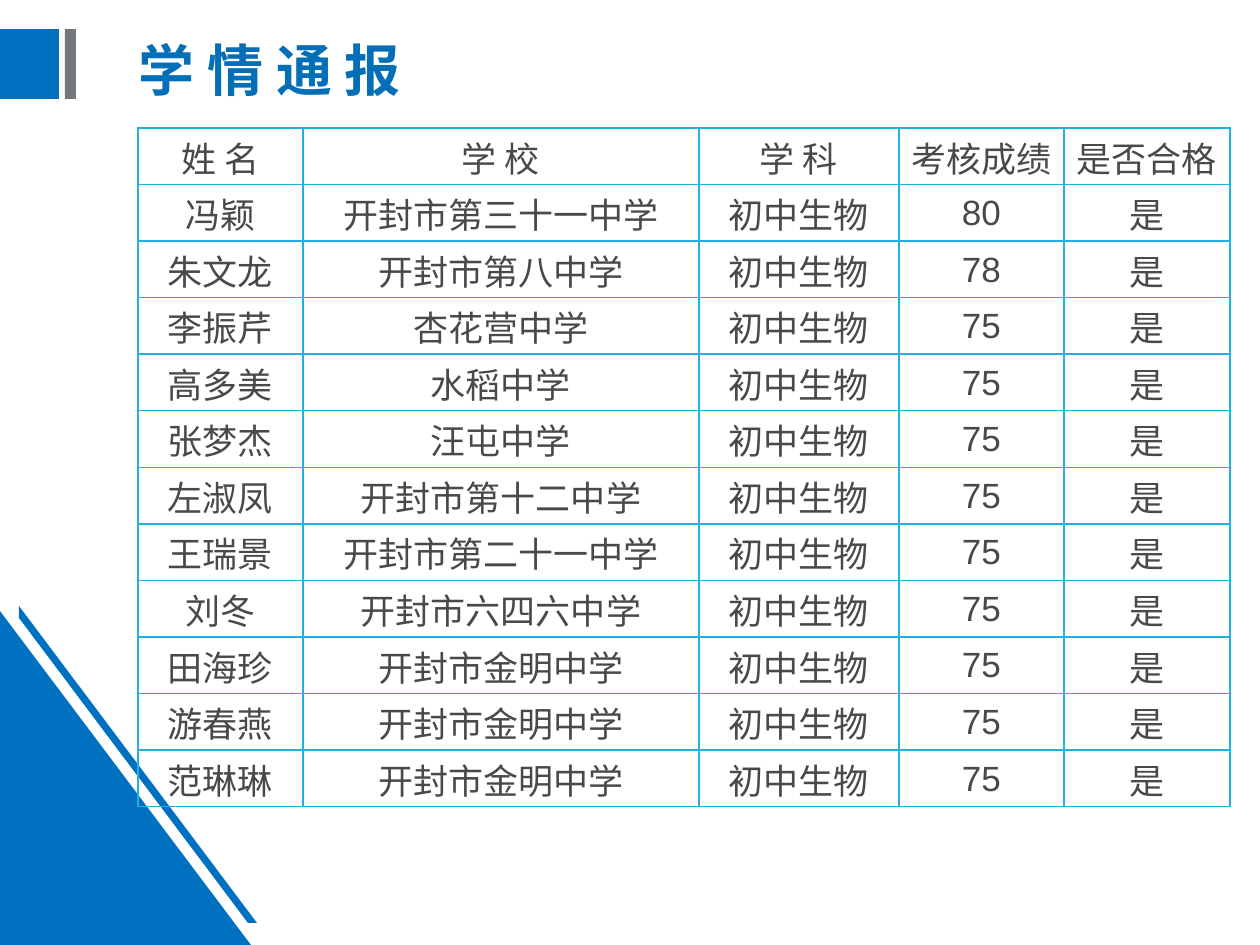
from lxml.etree import SubElement
from pptx import Presentation
from pptx.dml.color import RGBColor
from pptx.enum.shapes import MSO_SHAPE as SHAPE
from pptx.enum.text import MSO_ANCHOR as ANCHOR, PP_ALIGN as ALIGN
from pptx.oxml.ns import qn
from pptx.util import Inches, Pt

PX = Inches(1) / 126
BLUE = RGBColor(0x00, 0x70, 0xC0)
GRAY = RGBColor(0x73, 0x76, 0x7A)
TITLE_BLUE = RGBColor(0x04, 0x6F, 0xB6)
TEXT = RGBColor(0x47, 0x49, 0x4B)
BORDER = RGBColor(0x22, 0xB1, 0xDE)
TITLE_FONT = "Noto Sans CJK SC"

HEADER = ["姓 名", "学 校", "学 科", "考核成绩", "是否合格"]
SUBJECT, PASSED = "初中生物", "是"
RESULTS = [
    ("冯颖", "开封市第三十一中学", 80),
    ("朱文龙", "开封市第八中学", 78),
    ("李振芹", "杏花营中学", 75),
    ("高多美", "水稻中学", 75),
    ("张梦杰", "汪屯中学", 75),
    ("左淑凤", "开封市第十二中学", 75),
    ("王瑞景", "开封市第二十一中学", 75),
    ("刘冬", "开封市六四六中学", 75),
    ("田海珍", "开封市金明中学", 75),
    ("游春燕", "开封市金明中学", 75),
    ("范琳琳", "开封市金明中学", 75),
]
COL_WIDTHS = [165, 396, 200, 165, 166]


def px(n):
    return round(n * PX)


def paint(sp, color):
    sp.shadow.inherit = False
    sp.fill.solid()
    sp.fill.fore_color.rgb = color
    sp.line.fill.background()


def add_block(s, kind, x, y, w, h, color):
    paint(s.shapes.add_shape(kind, px(x), px(y), px(w), px(h)), color)


def add_title_marker(s, x, y, h):
    add_block(s, SHAPE.RECTANGLE, x, y, 59, h, BLUE)
    add_block(s, SHAPE.RECTANGLE, x + 65, y, 11, h, GRAY)


def add_corner(s, x, y, w, h):
    add_block(s, SHAPE.RIGHT_TRIANGLE, x, y + 5, w - 6, h - 5, BLUE)
    fb = s.shapes.build_freeform(x + 19, y, scale=PX)
    fb.add_line_segments([(x + w, y + 317), (x + w - 9, y + 317), (x + 19, y + 12)])
    paint(fb.convert_to_shape(), BLUE)


def set_title(s, text, x, y, w, h):
    sp = s.shapes.title
    sp.left, sp.top, sp.width, sp.height = px(x), px(y), px(w), px(h)
    tf = sp.text_frame
    tf.text = text
    tf.vertical_anchor = ANCHOR.MIDDLE
    p = tf.paragraphs[0]
    p.alignment = ALIGN.LEFT
    p.line_spacing = 0.9
    font = p.font
    font.name, font.size, font.bold = TITLE_FONT, Pt(32), True
    font.color.rgb = TITLE_BLUE
    latin = p._p.pPr.find(qn("a:defRPr")).find(qn("a:latin"))
    latin.addnext(latin.makeelement(qn("a:ea"), {"typeface": TITLE_FONT}))


def set_borders(cell):
    tc_pr = cell._tc.get_or_add_tcPr()
    for i, side in enumerate(("a:lnL", "a:lnR", "a:lnT", "a:lnB")):
        ln = tc_pr.makeelement(qn(side), {"w": str(Pt(1))})
        fill = SubElement(ln, qn("a:solidFill"))
        SubElement(fill, qn("a:srgbClr"), val=str(BORDER))
        tc_pr.insert(i, ln)


def format_cell(cell, text):
    cell.text = text
    cell.fill.background()
    cell.vertical_anchor = ANCHOR.MIDDLE
    cell.margin_left = cell.margin_right = cell.margin_top = px(1)
    cell.margin_bottom = 0
    p = cell.text_frame.paragraphs[0]
    p.alignment = ALIGN.CENTER
    p.font.name, p.font.size = "Arial", Pt(20)
    p.font.color.rgb = TEXT
    set_borders(cell)


def add_results(s, x, y, w, h):
    rows = [HEADER] + [
        [name, school, SUBJECT, str(score), PASSED] for name, school, score in RESULTS
    ]
    table = s.shapes.add_table(
        len(rows), len(HEADER), px(x), px(y), px(w), px(h)
    ).table
    table.first_row = table.horz_banding = False
    for col, width in zip(table.columns, COL_WIDTHS):
        col.width = px(width)
    for r, values in enumerate(rows):
        for c, value in enumerate(values):
            format_cell(table.cell(r, c), value)


def main():
    prs = Presentation()
    prs.slide_width, prs.slide_height = px(1260), px(945)
    s = prs.slides.add_slide(prs.slide_layouts[5])
    add_title_marker(s, 0, 29, 70)
    add_corner(s, 0, 606, 257, 339)
    set_title(s, "学 情 通 报", 126, 18, 563, 110)
    add_results(s, 138, 128, sum(COL_WIDTHS), 679)
    prs.save("out.pptx")


if __name__ == "__main__":
    main()
